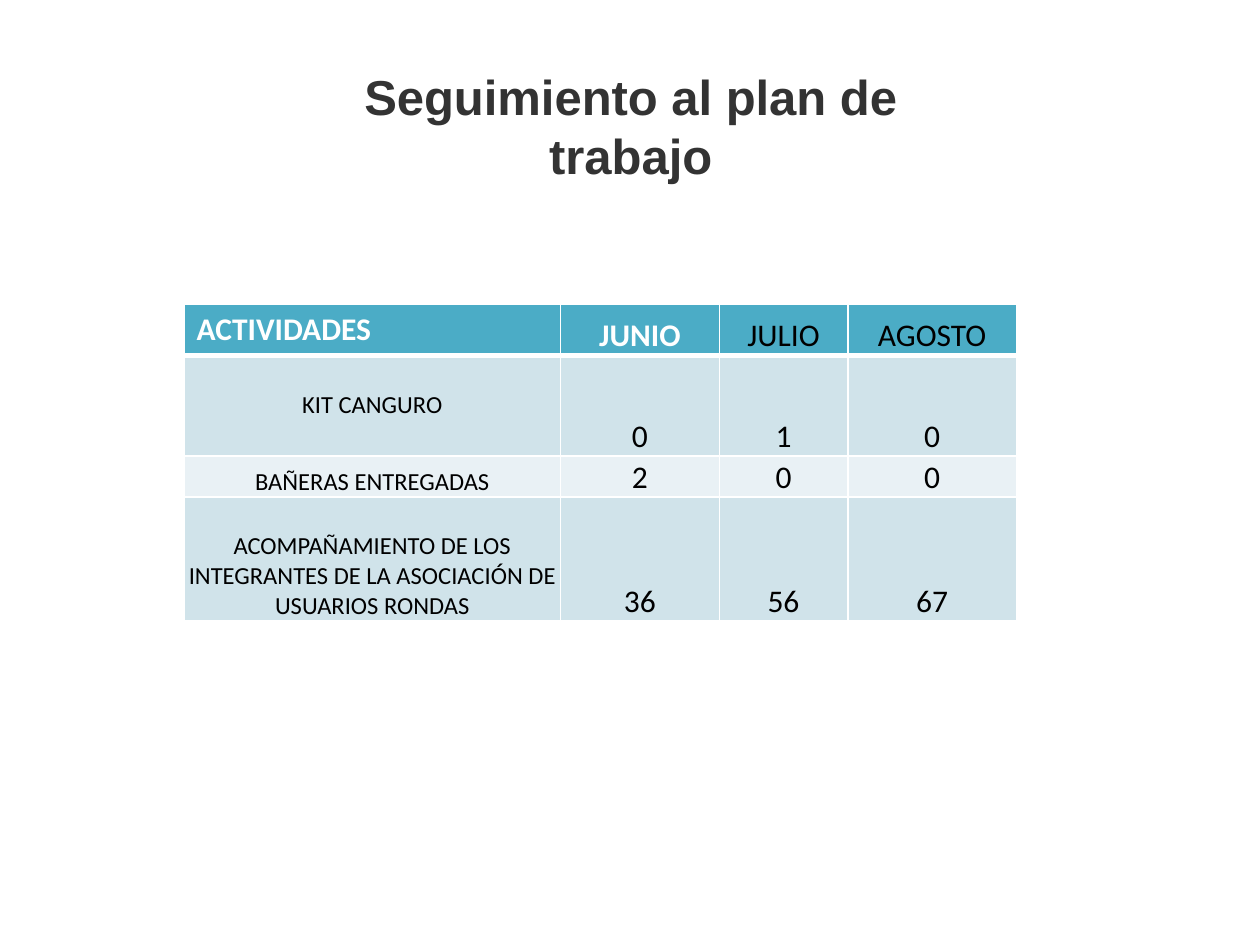
"""Build the work plan follow-up slide with its monthly activity table."""
from lxml import etree
from pptx import Presentation
from pptx import util as u
from pptx.dml.color import RGBColor
from pptx.enum import text
from pptx.oxml import ns

WHITE = RGBColor(0xFF, 0xFF, 0xFF)
BLACK = RGBColor(0, 0, 0)
DARK_GRAY = RGBColor(0x33, 0x33, 0x33)
TEAL = RGBColor(0x4B, 0xAC, 0xC6)
BAND_DARK = RGBColor(0xD0, 0xE3, 0xEA)
BAND_LIGHT = RGBColor(0xE9, 0xF1, 0xF5)

ROWS = [
    ("ACTIVIDADES", "JUNIO", "JULIO", "AGOSTO"),
    ("KIT CANGURO", "0", "1", "0"),
    ("BAÑERAS ENTREGADAS", "2", "0", "0"),
    ("ACOMPAÑAMIENTO DE LOS INTEGRANTES DE LA ASOCIACIÓN DE USUARIOS RONDAS",
     "36", "56", "67"),
]
COLUMN_WIDTHS = [7.59, 3.2, 2.59, 3.4]
ROW_HEIGHTS = [1, 2.03, 0.83, 2.49]
ROW_FILLS = [TEAL, BAND_DARK, BAND_LIGHT, BAND_DARK]


def add_border(cell, side, points):
    properties = cell._tc.get_or_add_tcPr()
    line = etree.SubElement(properties, ns.qn(f"a:ln{side}"), w=str(u.Pt(points)))
    fill = etree.SubElement(line, ns.qn("a:solidFill"))
    etree.SubElement(fill, ns.qn("a:srgbClr"), val=str(WHITE))


deck = Presentation()
deck.slide_width, deck.slide_height = u.Cm(25.4), u.Cm(19.05)
page = deck.slides.add_slide(deck.slide_layouts[5])

title = page.shapes.title
title.left, title.top, title.width, title.height = (
    u.Cm(5.31), u.Cm(1.22), u.Cm(14.81), u.Cm(3.84))
frame = title.text_frame
frame.text = "Seguimiento al plan de trabajo"
frame.word_wrap = True
frame.auto_size = text.MSO_AUTO_SIZE.NONE
frame.vertical_anchor = text.MSO_ANCHOR.TOP
para = frame.paragraphs[0]
para.alignment = text.PP_ALIGN.CENTER
para.font.name, para.font.size, para.font.bold = "Arial", u.Pt(28), True
para.font.color.rgb = DARK_GRAY

table = page.shapes.add_table(
    len(ROWS), len(COLUMN_WIDTHS), u.Cm(3.71), u.Cm(6.13),
    u.Cm(sum(COLUMN_WIDTHS)), u.Cm(sum(ROW_HEIGHTS))).table
table.horz_banding = False
for column, width in zip(table.columns, COLUMN_WIDTHS):
    column.width = u.Cm(width)

for r, (values, height, fill) in enumerate(zip(ROWS, ROW_HEIGHTS, ROW_FILLS)):
    table.rows[r].height = u.Cm(height)
    for c, value in enumerate(values):
        cell = table.cell(r, c)
        for side in "LRTB":
            thick = (r == 0 and side == "B") or (r == 1 and side == "T")
            add_border(cell, side, 3 if thick else 1)
        cell.fill.solid()
        cell.fill.fore_color.rgb = fill
        cell.text = value
        para = cell.text_frame.paragraphs[0]
        para.alignment = text.PP_ALIGN.CENTER
        if c == 0 and r == 0:
            para.alignment = text.PP_ALIGN.LEFT
            cell.vertical_anchor = text.MSO_ANCHOR.TOP
        elif c == 0 and r == 1:
            cell.vertical_anchor = text.MSO_ANCHOR.MIDDLE
        else:
            cell.vertical_anchor = text.MSO_ANCHOR.BOTTOM
            cell.margin_left = cell.margin_right = 0
            cell.margin_top = cell.margin_bottom = 0
        highlighted = r == 0 and c < 2
        para.font.name = "Calibri"
        para.font.size = u.Pt(14 if c == 0 and r > 0 else 18)
        para.font.bold = highlighted
        para.font.color.rgb = WHITE if highlighted else BLACK

deck.save("out.pptx")
